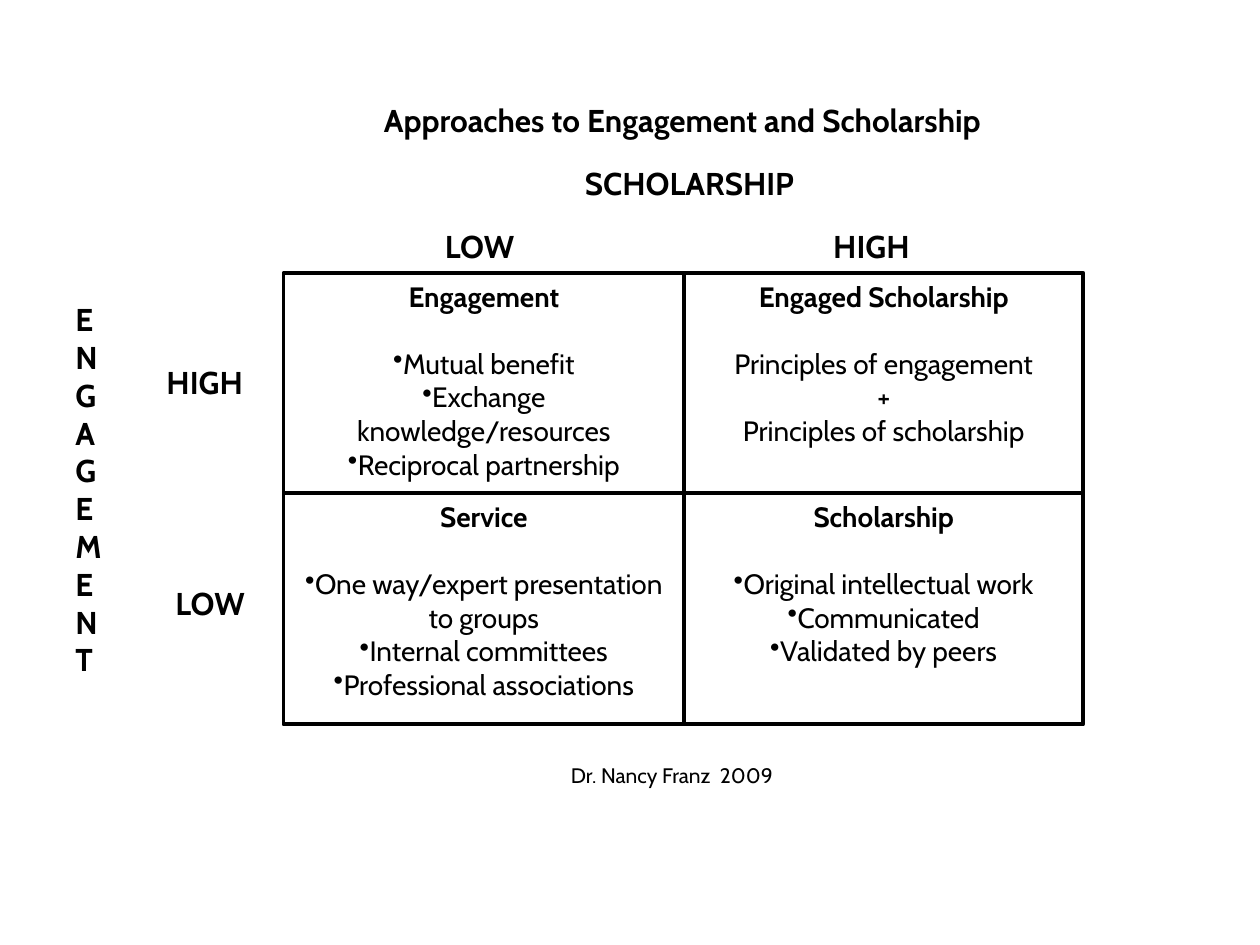
from lxml import etree
from pptx import Presentation
from pptx.dml.color import RGBColor
from pptx.enum.shapes import MSO_SHAPE
from pptx.enum.text import MSO_ANCHOR, MSO_AUTO_SIZE, PP_ALIGN
from pptx.oxml.ns import qn
from pptx.util import Pt

BLACK = RGBColor(0, 0, 0)
WHITE = RGBColor(255, 255, 255)
FONT = "Cabin"
CENTER, LEFT = PP_ALIGN.CENTER, PP_ALIGN.LEFT
TOP = MSO_ANCHOR.TOP
NO_AUTOFIT = MSO_AUTO_SIZE.NONE
RECTANGLE = MSO_SHAPE.RECTANGLE
TITLE_ONLY = 5

# Left, top, width and height, in points
TITLE_BOX = (174, 54, 432, 29)
MATRIX_BOX = (162, 156, 457, 258)
COLUMN_WIDTHS = (229, 228)
ROW_HEIGHTS = (126, 132)

LABELS = [
    ("SCHOLARSHIP", (310, 90, 168, 29)),
    ("LOW", (244, 126, 60, 29)),
    ("HIGH", (462, 126, 72, 29)),
    ("HIGH", (84, 204, 66, 29)),
    ("LOW", (90, 330, 60, 29)),
]

# Rows of quadrants: heading, lines, whether the lines are bulleted
QUADRANTS = [
    [
        ("Engagement",
         ["Mutual benefit", "Exchange knowledge/resources", "Reciprocal partnership"], True),
        ("Engaged Scholarship",
         ["Principles of engagement", "+", "Principles of scholarship"], False),
    ],
    [
        ("Service",
         ["One way/expert presentation to groups", "Internal committees",
          "Professional associations"], True),
        ("Scholarship",
         ["Original intellectual work", "Communicated", "Validated by peers"], True),
    ],
]


def format_para(para, size, bold=False, align=CENTER):
    para.alignment = align
    for span in para.runs:
        span.font.name = FONT
        span.font.size = Pt(size)
        span.font.bold = bold
        span.font.color.rgb = BLACK


def add_bullet(para):
    properties = para._p.get_or_add_pPr()
    properties.set("marL", "0")
    properties.set("indent", "0")
    etree.SubElement(properties, qn("a:buChar")).set("char", "•")


def add_title(page, text, box):
    title = page.shapes.title
    title.left, title.top, title.width, title.height = map(Pt, box)
    frame = title.text_frame
    frame.text = text
    frame.auto_size = NO_AUTOFIT
    frame.vertical_anchor = TOP
    format_para(frame.paragraphs[0], 18, bold=True)


def add_label(page, text, box, size=18, bold=True, align=CENTER):
    label = page.shapes.add_textbox(*map(Pt, box))
    frame = label.text_frame
    frame.word_wrap = True
    frame.text = text
    format_para(frame.paragraphs[0], size, bold, align)


def add_quadrant(page, heading, lines, bulleted, box):
    quadrant = page.shapes.add_shape(RECTANGLE, *map(Pt, box))
    quadrant.shadow.inherit = False
    quadrant.fill.solid()
    quadrant.fill.fore_color.rgb = WHITE
    quadrant.line.color.rgb = BLACK
    quadrant.line.width = Pt(2.25)
    frame = quadrant.text_frame
    frame.word_wrap = True
    frame.vertical_anchor = TOP
    frame.text = heading
    format_para(frame.paragraphs[0], 16, bold=True)
    frame.paragraphs[0].space_after = Pt(19.2)
    for line in lines:
        para = frame.add_paragraph()
        para.text = line
        format_para(para, 16)
        if bulleted:
            add_bullet(para)


def add_matrix(page, rows, box):
    """Fill the box with quadrants, sharing it out by the column and row sizes."""
    left, top, width, height = box
    y = top
    for row, row_height in zip(rows, ROW_HEIGHTS):
        cell_height = height * row_height / sum(ROW_HEIGHTS)
        x = left
        for (heading, lines, bulleted), column_width in zip(row, COLUMN_WIDTHS):
            cell_width = width * column_width / sum(COLUMN_WIDTHS)
            add_quadrant(page, heading, lines, bulleted, (x, y, cell_width, cell_height))
            x += cell_width
        y += cell_height


def main():
    deck = Presentation()
    deck.slide_width, deck.slide_height = Pt(720), Pt(540)
    page = deck.slides.add_slide(deck.slide_layouts[TITLE_ONLY])
    add_title(page, "Approaches to Engagement and Scholarship", TITLE_BOX)
    add_matrix(page, QUADRANTS, MATRIX_BOX)
    for text, box in LABELS:
        add_label(page, text, box)
    # The narrow box wraps after every letter, so the word reads downwards
    add_label(page, "ENGAGEMENT", (36, 168, 30, 223), align=LEFT)
    add_label(page, "Dr. Nancy Franz  2009", (318, 432, 132, 36), size=12, bold=False)
    deck.save("out.pptx")


if __name__ == "__main__":
    main()
